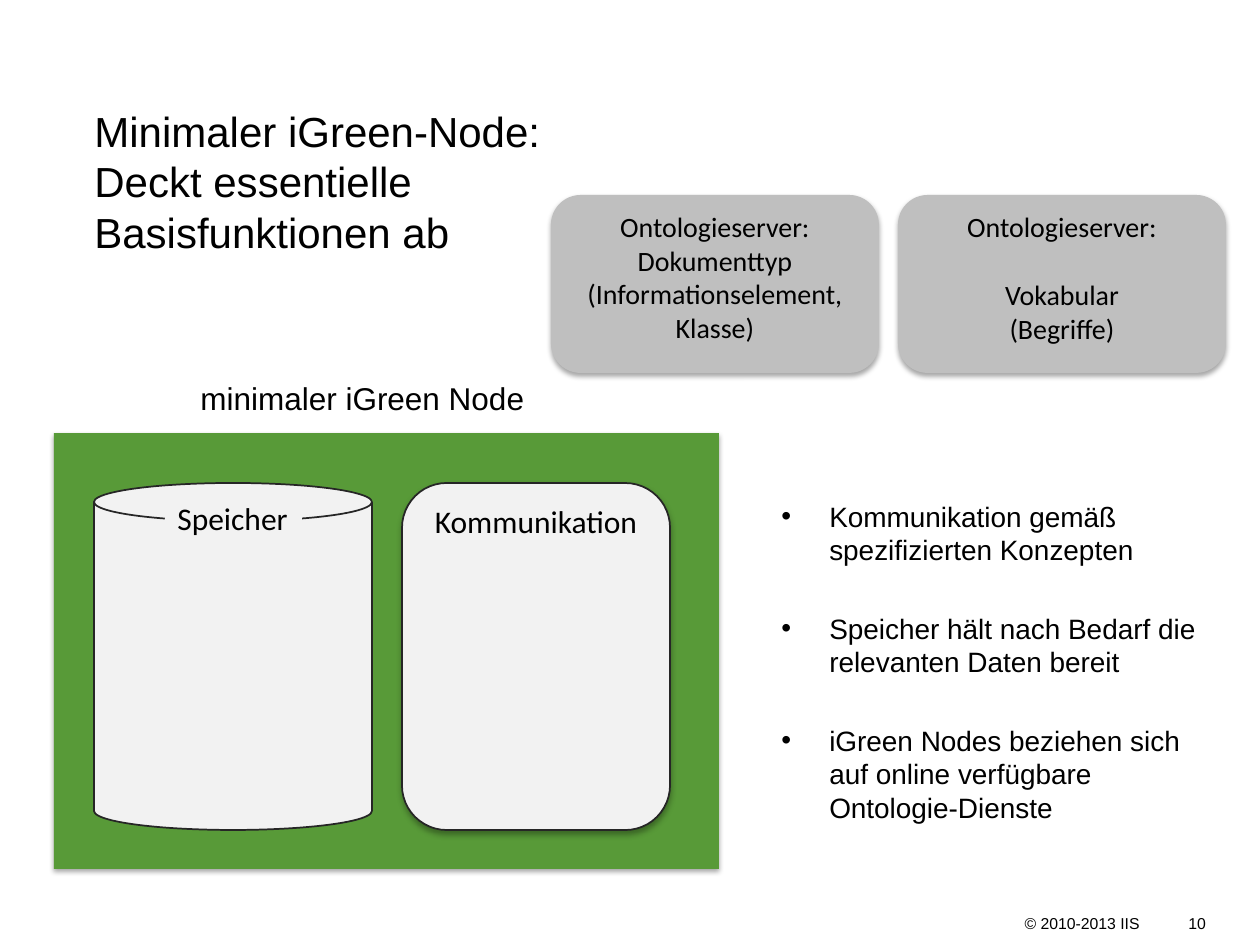
from dataclasses import dataclass
from lxml import etree
from pptx import Presentation, util as u
from pptx.dml.color import RGBColor
from pptx.enum import shapes, text
from pptx.oxml.ns import qn

PX = 914400 / 126


@dataclass(frozen=True)
class Theme:
    ink: str = "000000"
    outline: str = "262626"
    paper: str = "F2F2F2"
    server: str = "BFBFBF"
    node: str = "589A38"
    sans: str = "Arial"
    label: str = "Calibri"
    title: int = 24
    heading: int = 18
    body: int = 16
    footer: int = 9


THEME = Theme()
KIND = shapes.MSO_SHAPE
ALIGN = text.PP_ALIGN

TITLE = ["Minimaler iGreen-Node:", "Deckt essentielle", "Basisfunktionen ab"]
SERVERS = [
    [("Ontologieserver: Dokumenttyp (Informationselement, Klasse)", 0)],
    [("Ontologieserver:", 0), ("Vokabular", 19.5), ("(Begriffe)", 0)],
]
BULLETS = [
    "Kommunikation gemäß spezifizierten Konzepten",
    "Speicher hält nach Bedarf die relevanten Daten bereit",
    "iGreen Nodes beziehen sich auf online verfügbare Ontologie-Dienste",
]
BULLET_GAP = 25.6
NODE_BOX = (54, 433, 665, 436)
STORE = (94, 483, 278, 347)
STORE_CAP = 38
SERVER_BOX = (551, 195, 328, 178)
SERVER_STEP = 347
SOFT_SHADOW = (35, 3.1, 1.8)
DEEP_SHADOW = (32, 3.5, 2.2)


def px(*values):
    return [u.Emu(round(value * PX)) for value in values]


def color(value):
    return RGBColor.from_string(value)


def add_shadow(shape, opacity, blur, distance):
    effects = shape._element.spPr.find(qn("a:effectLst"))
    shadow = etree.SubElement(effects, qn("a:outerShdw"), blurRad=str(u.Pt(blur)),
                              dist=str(u.Pt(distance)), dir="5400000", rotWithShape="0")
    tint = etree.SubElement(shadow, qn("a:srgbClr"), val=THEME.ink)
    etree.SubElement(tint, qn("a:alpha"), val=str(opacity * 1000))


def add_block(parent, kind, box, fill, line=None, shadow=None):
    shape = parent.add_shape(kind, *px(*box))
    shape.shadow.inherit = False
    shape.fill.solid()
    shape.fill.fore_color.rgb = color(fill)
    if line:
        shape.line.color.rgb = color(line)
        shape.line.width = u.Pt(1)
    else:
        shape.line.fill.background()
    if shadow:
        add_shadow(shape, *shadow)
    return shape


def add_edge(parent, x, top, bottom):
    edge = parent.add_connector(shapes.MSO_CONNECTOR.STRAIGHT, *px(x, top, x, bottom))
    edge.line.color.rgb = color(THEME.outline)
    edge.line.width = u.Pt(1)
    etree.SubElement(edge._element.spPr, qn("a:effectLst"))


def write(shape, paragraphs, size, font, align=ALIGN.LEFT, wrap=True,
          anchor=text.MSO_ANCHOR.TOP, bullet=False):
    frame = shape.text_frame
    frame.word_wrap = wrap
    frame.vertical_anchor = anchor
    for index, (content, gap) in enumerate(paragraphs):
        paragraph = frame.add_paragraph() if index else frame.paragraphs[0]
        paragraph.alignment = align
        if gap:
            paragraph.space_before = u.Pt(gap)
        if bullet:
            properties = paragraph._p.get_or_add_pPr()
            indent = u.Inches(0.38)
            properties.set("marL", str(indent))
            properties.set("indent", str(-indent))
            etree.SubElement(properties, qn("a:buFont"), typeface=THEME.sans)
            etree.SubElement(properties, qn("a:buChar"), char="•")
        for number, line in enumerate(content.split("\n")):
            if number:
                paragraph.add_line_break()
            run = paragraph.add_run()
            run.text = line
            run.font.size = u.Pt(size)
            run.font.name = font
            run.font.color.rgb = color(THEME.ink)


def add_text(parent, box, paragraphs, size, **options):
    write(parent.add_textbox(*px(*box)), paragraphs, size, THEME.sans, **options)


def add_store(parent):
    left, top, width, height = STORE
    half = STORE_CAP // 2
    bottom = top + height
    group = parent.add_group_shape().shapes
    add_block(group, KIND.OVAL, (left, bottom - STORE_CAP, width, STORE_CAP),
              THEME.paper, THEME.outline)
    add_block(group, KIND.RECTANGLE, (left, top + half, width, height - STORE_CAP),
              THEME.paper)
    add_block(group, KIND.OVAL, (left, top, width, STORE_CAP), THEME.paper, THEME.outline)
    for x in (left + width, left):
        add_edge(group, x, top + half, bottom - half)


def main():
    presentation = Presentation()
    presentation.slide_width, presentation.slide_height = px(1260, 945)
    slide = presentation.slides.add_slide(presentation.slide_layouts[6])
    parts = slide.shapes

    add_text(parts, (282, 908, 870, 32), [("© 2010-2013 IIS", 0)], THEME.footer,
             align=ALIGN.RIGHT)
    add_text(parts, (82, 97, 1095, 168), [("\n".join(TITLE), 0)], THEME.title,
             anchor=text.MSO_ANCHOR.MIDDLE)
    add_text(parts, (1176, 908, 57, 32), [("10", 0)], THEME.footer, wrap=False)

    left, top, width, height = SERVER_BOX
    for index, paragraphs in enumerate(SERVERS):
        server = add_block(parts, KIND.ROUNDED_RECTANGLE,
                           (left + index * SERVER_STEP, top, width, height),
                           THEME.server, shadow=SOFT_SHADOW)
        write(server, paragraphs, THEME.body, THEME.label, align=ALIGN.CENTER)

    add_block(parts, KIND.RECTANGLE, NODE_BOX, THEME.node, shadow=SOFT_SHADOW)
    add_store(parts)
    communication = add_block(parts, KIND.ROUNDED_RECTANGLE, (402, 483, 268, 347),
                              THEME.paper, THEME.outline, DEEP_SHADOW)
    write(communication, [("Kommunikation", 0)], THEME.heading, THEME.label,
          align=ALIGN.CENTER)
    store_label = add_block(parts, KIND.RECTANGLE, (165, 493, 137, 50), THEME.paper)
    write(store_label, [("Speicher", 0)], THEME.heading, THEME.label, wrap=False)

    add_text(parts, (769, 493, 460, 387),
             [(item, BULLET_GAP if index else 0) for index, item in enumerate(BULLETS)],
             THEME.body, bullet=True)
    add_text(parts, (188, 373, 353, 50), [("minimaler iGreen Node", 0)], THEME.heading,
             wrap=False)
    presentation.save("out.pptx")


if __name__ == "__main__":
    main()
